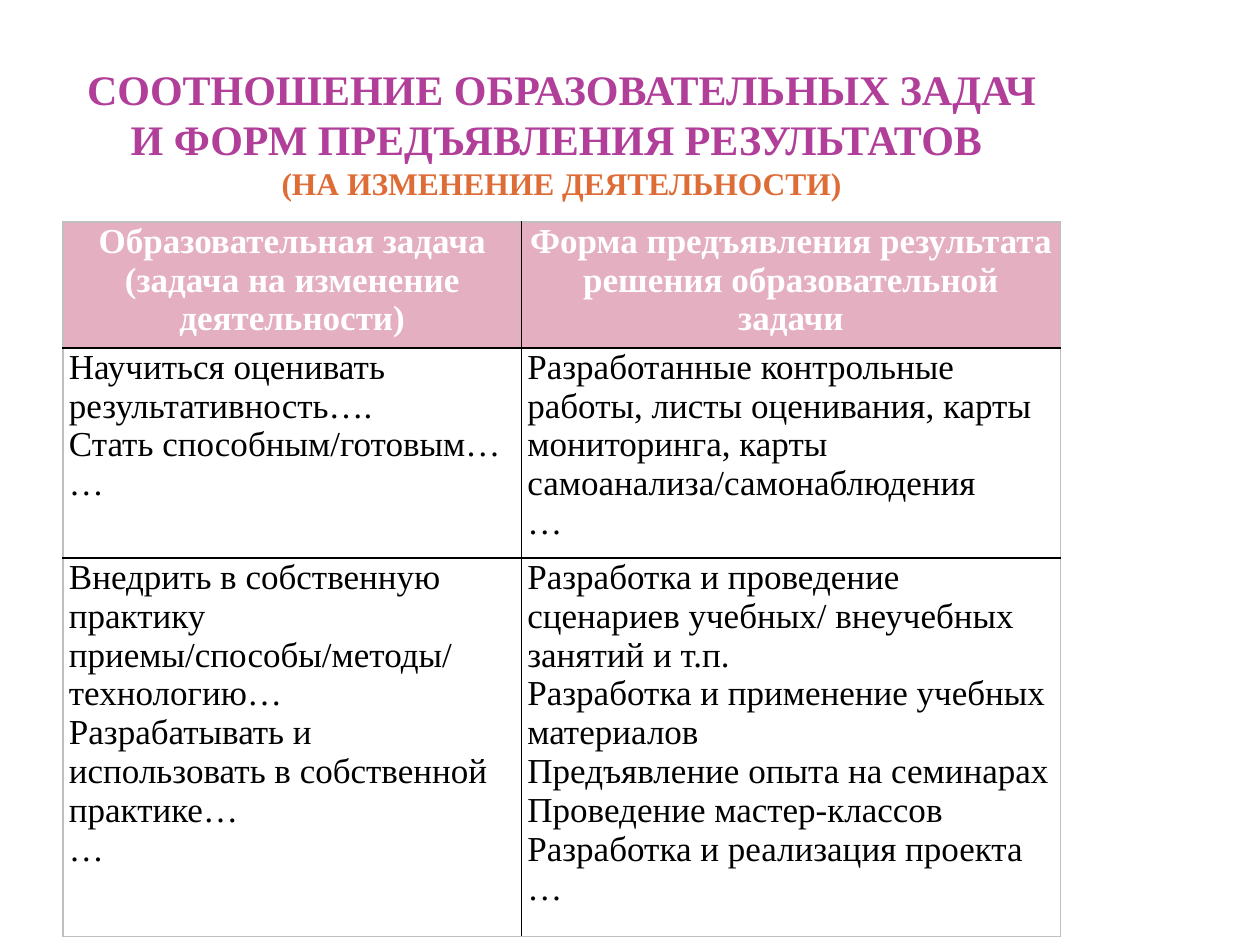
from lxml.etree import SubElement
from pptx import Presentation
from pptx.dml.color import RGBColor
from pptx.enum.text import MSO_ANCHOR, PP_ALIGN
from pptx.oxml.ns import qn
from pptx.util import Pt

COLORS = {
    "title": "B13F9A", "subtitle": "DE6C36", "header": "E5AFC2",
    "header_text": "FFFFFF", "text": "000000", "inner": "000000", "outer": "BFBFBF",
}
LEFT, WIDTH = 36, 570
COL_WIDTHS = [262, 308]
ROW_HEIGHTS = [60, 119.6, 215]
MARGINS = {"margin_left": Pt(3.4), "margin_right": Pt(3.4), "margin_top": 0, "margin_bottom": 0}

ROWS = [
    [["Образовательная задача", "(задача на изменение деятельности)"],
     ["Форма предъявления результата решения образовательной задачи"]],
    [["Научиться оценивать результативность….", "Стать способным/готовым…", "…"],
     ["Разработанные контрольные работы, листы оценивания, карты мониторинга, "
      "карты самоанализа/самонаблюдения", "…"]],
    [["Внедрить в собственную практику приемы/способы/методы/ технологию…",
      "Разрабатывать и использовать в собственной практике…", "…"],
     ["Разработка и проведение сценариев учебных/ внеучебных занятий и т.п.",
      "Разработка и применение учебных материалов", "Предъявление опыта на семинарах",
      "Проведение мастер-классов", "Разработка и реализация проекта", "…"]],
]


def add_run(p, text, color, size, bold):
    r = p.add_run()
    r.text = text
    for name, value in {"name": "Times New Roman", "size": Pt(size), "bold": bold}.items():
        setattr(r.font, name, value)
    r.font.color.rgb = RGBColor.from_string(COLORS[color])


def add_border(cell, side, color):
    ln = SubElement(cell._tc.get_or_add_tcPr(), qn(f"a:ln{side}"), w=str(Pt(1)))
    fill = SubElement(ln, qn("a:solidFill"))
    SubElement(fill, qn("a:srgbClr"), val=COLORS[color])


prs = Presentation()
prs.slide_width, prs.slide_height = Pt(720), Pt(540)
s = prs.slides.add_slide(prs.slide_layouts[6])

# Title
tf = s.shapes.add_textbox(Pt(LEFT), Pt(25.2), Pt(WIDTH), Pt(90)).text_frame
for name, value in {**MARGINS, "word_wrap": True, "vertical_anchor": MSO_ANCHOR.BOTTOM}.items():
    setattr(tf, name, value)
p = tf.paragraphs[0]
p.alignment = PP_ALIGN.CENTER
add_run(p, "СООТНОШЕНИЕ ОБРАЗОВАТЕЛЬНЫХ ЗАДАЧ И ФОРМ ПРЕДЪЯВЛЕНИЯ РЕЗУЛЬТАТОВ ", "title", 24, True)
p.add_line_break()
add_run(p, "(НА ИЗМЕНЕНИЕ ДЕЯТЕЛЬНОСТИ)", "subtitle", 18, True)

# Table of tasks and forms of results
table = s.shapes.add_table(len(ROWS), len(COL_WIDTHS), Pt(LEFT), Pt(126.8),
                           Pt(WIDTH), Pt(sum(ROW_HEIGHTS))).table
for column, width in zip(table.columns, COL_WIDTHS):
    column.width = Pt(width)
for row, height in zip(table.rows, ROW_HEIGHTS):
    row.height = Pt(height)

for i, row in enumerate(ROWS):
    for j, lines in enumerate(row):
        cell = table.cell(i, j)
        header = i == 0
        for name, value in MARGINS.items():
            setattr(cell, name, value)
        edges = {"L": j == 0, "R": j == len(row) - 1, "T": header, "B": i == len(ROWS) - 1}
        for side, is_outer in edges.items():
            add_border(cell, side, "outer" if is_outer else "inner")
        if header:
            cell.fill.solid()
            cell.fill.fore_color.rgb = RGBColor.from_string(COLORS["header"])
        else:
            cell.fill.background()
        tf = cell.text_frame
        for k, line in enumerate(lines):
            p = tf.add_paragraph() if k else tf.paragraphs[0]
            p.alignment = PP_ALIGN.CENTER if header else PP_ALIGN.LEFT
            add_run(p, line, "header_text" if header else "text", 20, header)

prs.save("out.pptx")
